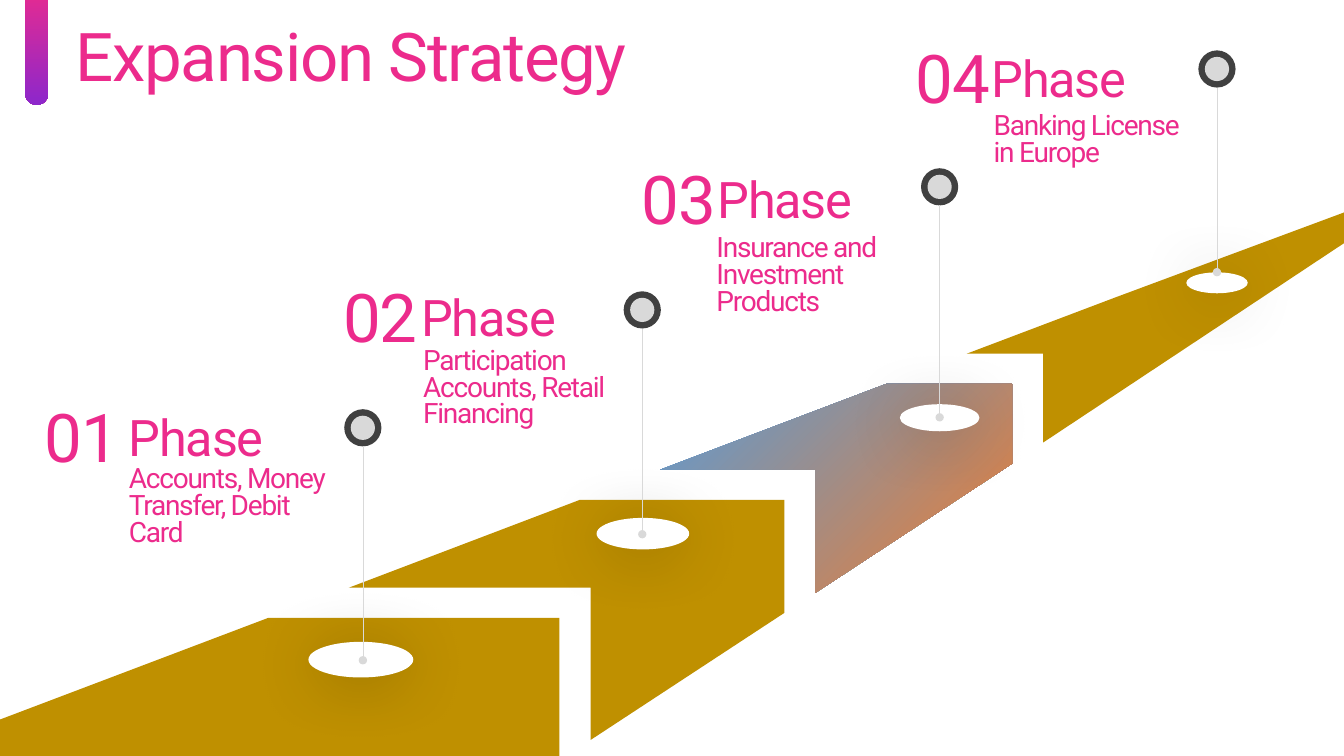
from dataclasses import dataclass

from lxml.etree import SubElement
from pptx import Presentation
from pptx.dml.color import RGBColor
from pptx.enum.shapes import MSO_CONNECTOR, MSO_SHAPE
from pptx.enum.text import MSO_ANCHOR, PP_ALIGN
from pptx.oxml.ns import qn
from pptx.util import Pt

PINK = RGBColor(0xEC, 0x2B, 0x8C)
PURPLE = RGBColor(0x8D, 0x27, 0xCB)
GOLD = RGBColor(0xBF, 0x90, 0x00)
BLUE = RGBColor(0x5B, 0x9B, 0xD5)
ORANGE = RGBColor(0xED, 0x7D, 0x31)
DARK = RGBColor(0x40, 0x40, 0x40)
GREY = RGBColor(0xD9, 0xD9, 0xD9)
WHITE = RGBColor(0xFF, 0xFF, 0xFF)

RING, DOT = 26.6, 17.3
HOLE_RATIO = 0.34

ROAD = [
    (GOLD, [(191.5, 441.4), (399.6, 441.4), (399.6, 540), (0, 540), (0, 514)]),
    (GOLD, [(560.2, 437.8), (421.9, 528.5), (421.9, 419.8),
            (249.1, 419.8), (414, 357.1), (560.2, 357.1)]),
    (GOLD, [(745.2, 316.1), (745.2, 252.7), (690.5, 252.7),
            (797, 212.4), (1035.4, 123.8)]),
    ((BLUE, ORANGE), [(722.9, 331.2), (582.5, 423.4), (582.5, 335.5),
                      (471.6, 335.5), (632.9, 274.3), (722.9, 274.3)]),
]


@dataclass
class Phase:
    number: str
    detail: str
    left: float
    top: float
    title_dx: float
    detail_dx: float
    detail_dy: float
    detail_width: float
    pin_x: float
    pin_top: float
    pin_foot: float
    hole_x: float
    hole_y: float
    hole_width: float


PHASES = [
    Phase("01", "Accounts, Money Transfer, Debit Card", 13.7, 289.4,
          71.3, 71.3, 40.4, 167.8, 259.2, 292.3, 471.6, 257.8, 471.2, 74.9),
    Phase("02", "Participation Accounts, Retail Financing", 226.8, 203.8,
          67, 68.4, 41.7, 171.4, 458.8, 208.1, 381.6, 459.2, 381.2, 66.2),
    Phase("03", "Insurance and Investment Products", 439.9, 119.5,
          65.5, 64.8, 45.4, 175.7, 671.2, 120.2, 298.1, 671.2, 298.4, 56.9),
    Phase("04", "Banking License in Europe", 635.8, 33.1,
          65.5, 66.9, 44.7, 161.3, 869.3, 36, 194.4, 869.3, 202, 43.9),
]


def paint(shape, fill, angle=315):
    """Fill with one colour, or with a gradient between two; no outline or shadow."""
    shape.shadow.inherit = False
    shape.line.fill.background()
    if isinstance(fill, RGBColor):
        shape.fill.solid()
        shape.fill.fore_color.rgb = fill
        return
    shape.fill.gradient()
    shape.fill.gradient_angle = angle
    for stop, color in zip(shape.fill.gradient_stops, fill):
        stop.color.rgb = color


def add_text(s, text, left, top, width, height, size,
             align=PP_ALIGN.LEFT, anchor=MSO_ANCHOR.TOP):
    tf = s.shapes.add_textbox(Pt(left), Pt(top), Pt(width), Pt(height)).text_frame
    tf.word_wrap = True
    tf.vertical_anchor = anchor
    p = tf.paragraphs[0]
    p.text = text
    p.alignment = align
    p.line_spacing = 0.8
    r = p.runs[0]
    r.font.name = "Roboto"
    r.font.size = Pt(size)
    r.font.color.rgb = PINK
    r._r.get_or_add_rPr().set("spc", "-90")


def add_ellipse(s, center_x, center_y, width, height, color):
    sp = s.shapes.add_shape(MSO_SHAPE.OVAL, Pt(center_x - width / 2),
                            Pt(center_y - height / 2), Pt(width), Pt(height))
    paint(sp, color)
    return sp


def add_soft_shadow(sp):
    effects = sp._element.spPr.find(qn("a:effectLst"))
    shadow = SubElement(effects, qn("a:outerShdw"), blurRad=str(Pt(47)),
                        dist=str(Pt(4)), dir="5400000", algn="t", rotWithShape="0")
    color = SubElement(shadow, qn("a:srgbClr"), val="000000")
    SubElement(color, qn("a:alpha"), val="22000")


def add_road(s):
    for fill, points in ROAD:
        corners = [(Pt(x), Pt(y)) for x, y in points]
        builder = s.shapes.build_freeform(*corners[0])
        builder.add_line_segments(corners[1:], close=True)
        paint(builder.convert_to_shape(), fill)


def add_pin(s, phase):
    hole = add_ellipse(s, phase.hole_x, phase.hole_y, phase.hole_width,
                       phase.hole_width * HOLE_RATIO, WHITE)
    add_soft_shadow(hole)
    center_y = phase.pin_top + RING / 2
    add_ellipse(s, phase.pin_x, center_y, RING, RING, DARK)
    add_ellipse(s, phase.pin_x, center_y, DOT, DOT, GREY)
    stem = s.shapes.add_connector(MSO_CONNECTOR.STRAIGHT,
                                  Pt(phase.pin_x), Pt(phase.pin_top + RING),
                                  Pt(phase.pin_x), Pt(phase.pin_foot))
    stem.line.color.rgb = GREY
    stem.line.width = Pt(0.5)
    SubElement(stem.line._get_or_add_ln(), qn("a:tailEnd"), type="oval")
    SubElement(stem._element.spPr, qn("a:effectLst"))


def add_phase_text(s, phase):
    left, top = phase.left, phase.top
    add_text(s, phase.detail, left + phase.detail_dx, top + phase.detail_dy,
             phase.detail_width, 46, 20)
    add_text(s, "Phase", left + phase.title_dx, top + 5.4, 171.4, 42.5, 36)
    add_text(s, phase.number, left, top, 78.5, 54, 48,
             PP_ALIGN.RIGHT, MSO_ANCHOR.MIDDLE)


def add_heading(s, left, top):
    add_text(s, "Expansion Strategy", left + 28.8, top + 30.2, 954, 54, 48)
    bar = s.shapes.add_shape(MSO_SHAPE.ROUNDED_RECTANGLE,
                             Pt(left), Pt(top), Pt(16.6), Pt(87.1))
    bar.adjustments[0] = 0.5
    paint(bar, (PINK, PURPLE), 270)


def main():
    prs = Presentation()
    prs.slide_width, prs.slide_height = Pt(960), Pt(540)
    s = prs.slides.add_slide(prs.slide_layouts[6])
    add_road(s)
    for phase in PHASES:
        add_pin(s, phase)
    for phase in PHASES:
        add_phase_text(s, phase)
    add_heading(s, 18, -12.2)
    prs.save("out.pptx")


if __name__ == "__main__":
    main()
